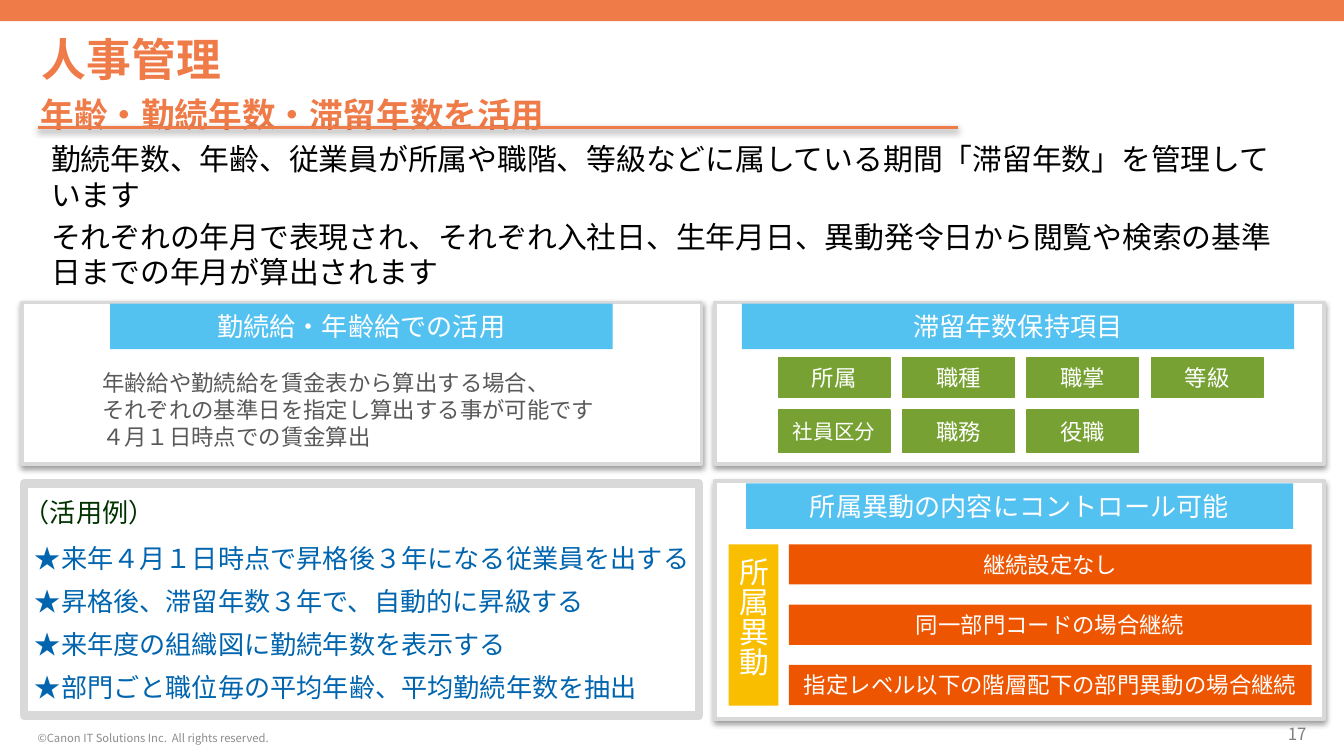
"""Build the personnel management slide on age, service years and tenure."""
from dataclasses import dataclass

from lxml import etree
from pptx import Presentation
from pptx import util as u
from pptx.dml.color import RGBColor
from pptx.enum import shapes, text
from pptx.oxml.ns import qn

TITLE = "人事管理"
SUBTITLE = "年齢・勤続年数・滞留年数を活用"
BODY = [
    "勤続年数、年齢、従業員が所属や職階、等級などに属している期間「滞留年数」を管理しています",
    "それぞれの年月で表現され、それぞれ入社日、生年月日、異動発令日から閲覧や検索の基準日までの年月が算出されます",
]
PANELS = [(0.41, 5.72, 12.85, 3.05), (13.51, 5.72, 11.51, 3.05), (13.51, 9.09, 11.51, 4.5)]
HEADERS = [
    ("勤続給・年齢給での活用", 2.08, 5.74, 9.5),
    ("滞留年数保持項目", 14.02, 5.74, 10.44),
    ("所属異動の内容にコントロール可能", 14.1, 9.14, 10.34),
]
PAY_NOTES = [
    "年齢給や勤続給を賃金表から算出する場合、",
    "それぞれの基準日を指定し算出する事が可能です",
    "４月１日時点での賃金算出",
]
EXAMPLE_LABEL = "（活用例）"
EXAMPLES = [
    "★来年４月１日時点で昇格後３年になる従業員を出する",
    "★昇格後、滞留年数３年で、自動的に昇級する",
    "★来年度の組織図に勤続年数を表示する",
    "★部門ごと職位毎の平均年齢、平均勤続年数を抽出",
]
ITEM_ROWS = [
    (6.76, 0.76, ["所属", "職種", "職掌", "等級"]),
    (7.75, 0.81, ["社員区分", "職務", "役職"]),
]
TRANSFER = "所属異動"
TRANSFER_RULES = ["継続設定なし", "同一部門コードの場合継続", "指定レベル以下の階層配下の部門異動の場合継続"]
COPYRIGHT = "©Canon IT Solutions Inc.  All rights reserved."
PAGE_NUMBER = "17"


@dataclass(frozen=True)
class Theme:
    """Font, colours and type sizes."""
    font: str = "Noto Sans CJK JP"
    accent: str = "EE7B48"
    header: str = "54C2F0"
    item: str = "77A233"
    rule: str = "EE5500"
    transfer: str = "F9BE00"
    frame: str = "D9D9D9"
    white: str = "FFFFFF"
    black: str = "000000"
    note: str = "595959"
    label: str = "003300"
    example: str = "0065AE"
    footer: str = "8C8C8C"
    number: str = "808080"
    title_size: int = 24
    subtitle_size: int = 18
    body_size: int = 16
    header_size: int = 14
    text_size: int = 12
    small_size: int = 11
    number_size: int = 9
    footer_size: int = 6
    leading: float = 1.2


THEME = Theme()
LEFT, CENTER, RIGHT = text.PP_ALIGN.LEFT, text.PP_ALIGN.CENTER, text.PP_ALIGN.RIGHT
TOP, MIDDLE, BOTTOM = text.MSO_ANCHOR.TOP, text.MSO_ANCHOR.MIDDLE, text.MSO_ANCHOR.BOTTOM


def rgb(value):
    return RGBColor.from_string(value)


def write(box, lines, size, color, align=LEFT, anchor=TOP, bold=False, gap=0,
          leading=None, hanging=0, inset=None, wrap=True):
    frame = box.text_frame
    frame.auto_size = text.MSO_AUTO_SIZE.NONE
    frame.word_wrap = wrap
    frame.vertical_anchor = anchor
    if inset is not None:
        frame.margin_left = frame.margin_right = u.Cm(inset)
        frame.margin_top = frame.margin_bottom = u.Cm(inset)
    frame.text = "\n".join(lines)
    for index, para in enumerate(frame.paragraphs):
        para.alignment = align
        para.line_spacing = u.Pt(leading or size * THEME.leading)
        para.space_before = u.Pt(gap if index else 0)
        properties = para._p.get_or_add_pPr()
        properties.set("marL", str(u.Cm(hanging)))
        properties.set("indent", str(-u.Cm(hanging)))
        etree.SubElement(properties, qn("a:buNone"))
        font = para.font
        font.size, font.bold, font.name = u.Pt(size), bold, THEME.font
        font.color.rgb = rgb(color)
        default = properties.find(qn("a:defRPr"))
        etree.SubElement(default, qn("a:ea"), typeface=THEME.font)


def place(box, left, top, width, height):
    box.left, box.top, box.width, box.height = map(u.Cm, (left, top, width, height))
    return box


def add_text(page, at, lines, size, color, **options):
    box = page.shapes.add_textbox(*map(u.Cm, at))
    write(box, lines, size, color, **options)


def add_box(page, at, fill=None, line=None, weight=0.75):
    box = page.shapes.add_shape(shapes.MSO_SHAPE.RECTANGLE, *map(u.Cm, at))
    box.shadow.inherit = False
    if fill:
        box.fill.solid()
        box.fill.fore_color.rgb = rgb(fill)
    else:
        box.fill.background()
    if line:
        box.line.color.rgb = rgb(line)
        box.line.width = u.Pt(weight)
    else:
        box.line.fill.background()
    return box


def add_label(page, at, fill, label, size, line=None, wrap=True):
    box = add_box(page, at, fill, line)
    write(box, [label], size, THEME.white, align=CENTER, anchor=MIDDLE, wrap=wrap)
    return box


def drop_shadow(shape):
    properties = shape._element.spPr
    effects = properties.find(qn("a:effectLst"))
    if effects is None:
        effects = etree.SubElement(properties, qn("a:effectLst"))
    shadow = etree.SubElement(effects, qn("a:outerShdw"), blurRad=str(u.Pt(3.1)),
                              dist=str(u.Pt(1.6)), dir="5400000", rotWithShape="0")
    color = etree.SubElement(shadow, qn("a:srgbClr"), val=THEME.black)
    etree.SubElement(color, qn("a:alpha"), val="38000")


def add_heading(page):
    add_box(page, (0, 0, 25.4, 0.4), THEME.accent)
    ends = map(u.Cm, (0.71, 2.41, 18.11, 2.41))
    underline = page.shapes.add_connector(shapes.MSO_CONNECTOR.STRAIGHT, *ends)
    underline.line.color.rgb = rgb(THEME.accent)
    underline.line.width = u.Pt(2)
    drop_shadow(underline)
    title, subtitle, body = page.placeholders
    write(place(title, 0.79, 0.61, 19.99, 0.99), [TITLE], THEME.title_size, THEME.accent,
          anchor=MIDDLE, bold=True, inset=0)
    write(place(subtitle, 0.51, 1.65, 16.99, 0.86), [SUBTITLE], THEME.subtitle_size,
          THEME.accent, bold=True)
    write(place(body, 0.71, 2.54, 24, 0.79), BODY, THEME.body_size, THEME.black, gap=3)


def add_panels(page):
    for at in PANELS:
        drop_shadow(add_box(page, at, THEME.white, THEME.frame, 2))
    add_box(page, (0.46, 9.14, 12.75, 4.39), line=THEME.frame, weight=4.5)
    for label, left, top, width in HEADERS:
        add_label(page, (left, top, width, 0.86), THEME.header, label, THEME.header_size)
    add_text(page, (1.68, 6.86, 10.34, 1.8), PAY_NOTES, THEME.text_size, THEME.note)
    add_text(page, (0.2, 9.25, 4.32, 0.86), [EXAMPLE_LABEL], THEME.header_size, THEME.label)
    add_text(page, (0.41, 10.19, 13.59, 3.28), EXAMPLES, THEME.header_size, THEME.example,
             gap=8, leading=15, hanging=0.48)


def add_items(page):
    for top, height, labels in ITEM_ROWS:
        for column, label in enumerate(labels):
            size = THEME.small_size if len(label) > 2 else THEME.text_size
            add_label(page, (14.71 + 2.35 * column, top, 2.11, height), THEME.item, label,
                      size, line=THEME.item, wrap=False)


def add_transfer(page):
    side = add_label(page, (13.77, 10.29, 0.94, 3.05), THEME.transfer, TRANSFER,
                     THEME.body_size, wrap=False)
    side.text_frame._txBody.bodyPr.set("vert", "eaVert")
    for row, label in enumerate(TRANSFER_RULES):
        add_label(page, (14.91, 10.29 + 1.14 * row, 9.88, 0.76), THEME.rule, label,
                  THEME.text_size)


def main():
    deck = Presentation()
    deck.slide_width, deck.slide_height = u.Cm(25.4), u.Cm(14.29)
    page = deck.slides.add_slide(deck.slide_layouts.get_by_name("Two Content"))
    add_heading(page)
    add_panels(page)
    add_items(page)
    add_transfer(page)
    add_text(page, (0.71, 13.69, 5.99, 0.38), [COPYRIGHT], THEME.footer_size, THEME.footer,
             anchor=BOTTOM, inset=0)
    add_text(page, (23.7, 13.69, 0.99, 0.38), [PAGE_NUMBER], THEME.number_size,
             THEME.number, align=RIGHT, anchor=BOTTOM, inset=0)
    deck.save("out.pptx")


if __name__ == "__main__":
    main()
